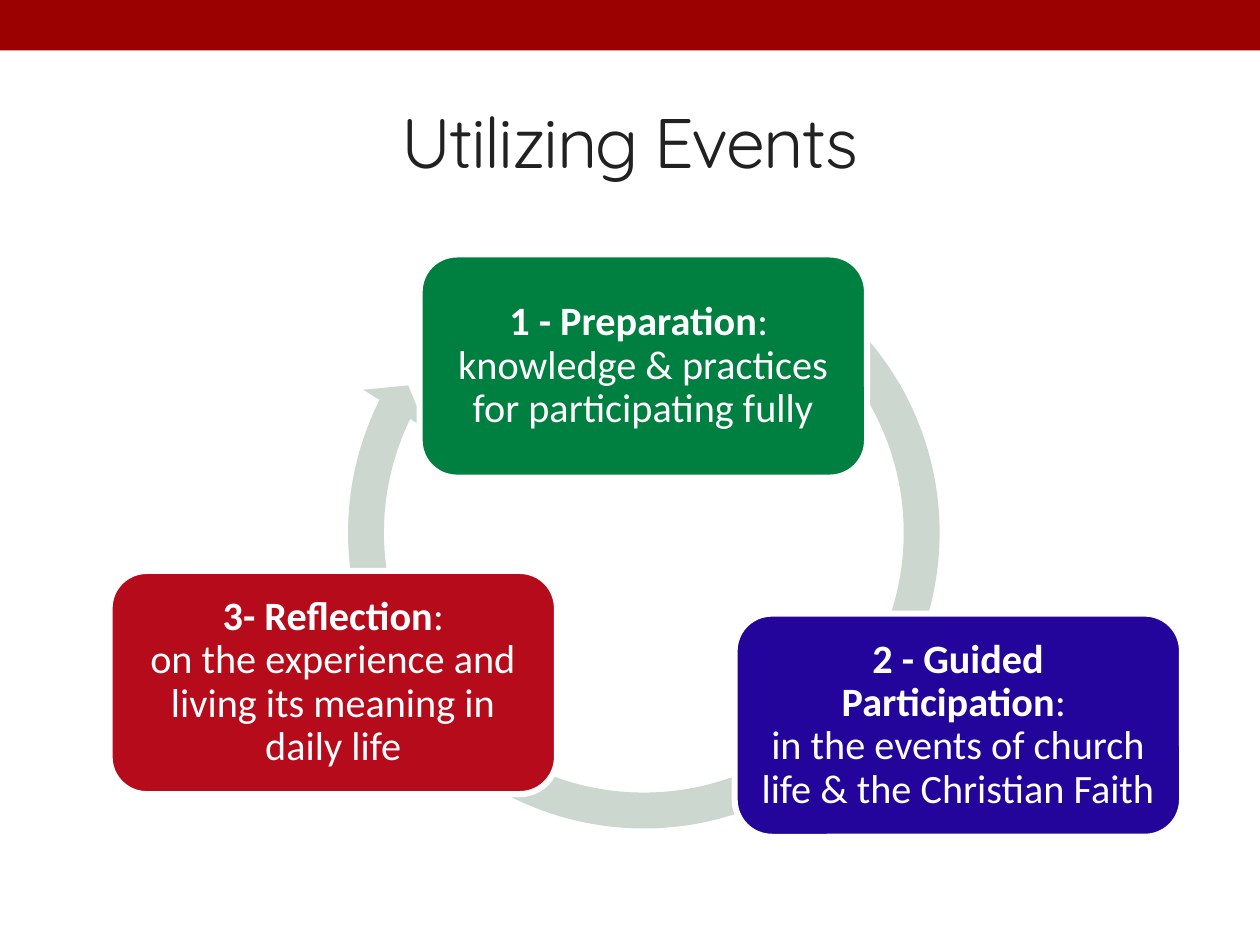
from dataclasses import dataclass

from pptx import Presentation
from pptx.dml.color import RGBColor as Color
from pptx.enum.shapes import MSO_SHAPE as Preset
from pptx.enum.text import MSO_ANCHOR as Anchor, MSO_AUTO_SIZE as AutoSize, PP_ALIGN as Align
from pptx.util import Cm, Pt


@dataclass(frozen=True)
class Theme:
    bar: str = "9B0101"
    title: str = "212121"
    ring: str = "CCD8CF"
    white: str = "FFFFFF"
    preparation: str = "008040"
    participation: str = "23059B"
    reflection: str = "B50B1B"
    title_font: str = "Quicksand"
    card_font: str = "Calibri"
    title_size: float = 40
    card_size: float = 23
    outline: float = 3.5


@dataclass(frozen=True)
class Box:
    left: float
    top: float
    width: float
    height: float

    def inner(self, left, top, width, height):
        return Box(self.left + left, self.top + top, width, height)

    def lengths(self):
        return [Cm(value) for value in (self.left, self.top, self.width, self.height)]


THEME = Theme()
CARD_SIZE = (9.02, 4.5)
RING_SIZE = 12.7
RING_ADJUSTMENTS = (0.057, 3.405, 123.8, 183, 0.059)
STAGES = [
    ("1 - Preparation", ": ", "knowledge & practices for participating fully",
     THEME.preparation, (6.25, 0.74)),
    ("2 - Guided Participation", ": ", "in the events of church life & the Christian Faith",
     THEME.participation, (12.6, 7.98)),
    ("3- Reflection", ":", "on the experience and living its meaning in daily life",
     THEME.reflection, (0, 7.12)),
]


def add_filled_shape(shapes, preset, box, color):
    shape = shapes.add_shape(preset, *box.lengths())
    shape.shadow.inherit = False
    shape.fill.solid()
    shape.fill.fore_color.rgb = Color.from_string(color)
    shape.line.fill.background()
    return shape


def style_font(font, name, size, color):
    font.name = name
    font.size = Pt(size)
    font.color.rgb = Color.from_string(color)


def add_header_bar(slide, box):
    add_filled_shape(slide.shapes, Preset.RECTANGLE, box, THEME.bar)


def place_title(slide, box, text):
    title = slide.shapes.title
    title.left, title.top, title.width, title.height = box.lengths()
    frame = title.text_frame
    frame.auto_size = AutoSize.NONE
    frame.vertical_anchor = Anchor.MIDDLE
    paragraph = frame.paragraphs[0]
    paragraph.alignment = Align.CENTER
    run = paragraph.add_run()
    run.text = text
    style_font(paragraph.font, THEME.title_font, THEME.title_size, THEME.title)
    run._r.get_or_add_rPr().set("spc", "-100")


def add_card(shapes, box, heading, separator, description, color):
    card = add_filled_shape(shapes, Preset.ROUNDED_RECTANGLE, box, color)
    card.line.color.rgb = Color.from_string(THEME.white)
    card.line.width = Pt(THEME.outline)
    frame = card.text_frame
    frame.word_wrap = True
    frame.vertical_anchor = Anchor.MIDDLE
    frame.margin_left = frame.margin_right = Cm(0.25)
    frame.margin_top = frame.margin_bottom = Cm(0.25)
    paragraph = frame.paragraphs[0]
    paragraph.alignment = Align.CENTER
    paragraph.line_spacing = 0.9
    style_font(paragraph.font, THEME.card_font, THEME.card_size, THEME.white)
    heading_run = paragraph.add_run()
    heading_run.text = heading
    heading_run.font.bold = True
    paragraph.add_run().text = separator
    paragraph.add_line_break()
    paragraph.add_run().text = description


def add_cycle(slide, box):
    shapes = slide.shapes.add_group_shape().shapes
    ring_box = box.inner(4.42, 0, RING_SIZE, RING_SIZE)
    ring = add_filled_shape(shapes, Preset.CIRCULAR_ARROW, ring_box, THEME.ring)
    for index, value in enumerate(RING_ADJUSTMENTS):
        ring.adjustments[index] = value
    for heading, separator, description, color, offset in STAGES:
        add_card(shapes, box.inner(*offset, *CARD_SIZE), heading, separator, description, color)


def main():
    presentation = Presentation()
    presentation.slide_width = Cm(25.4)
    presentation.slide_height = Cm(19.05)
    slide = presentation.slides.add_slide(presentation.slide_layouts.get_by_name("Title Only"))
    add_header_bar(slide, Box(0, 0, 25.4, 1.02))
    place_title(slide, Box(1.27, 1.47, 22.86, 2.74), "Utilizing Events")
    add_cycle(slide, Box(2.21, 4.39, 21.62, RING_SIZE))
    presentation.save("out.pptx")


if __name__ == "__main__":
    main()
